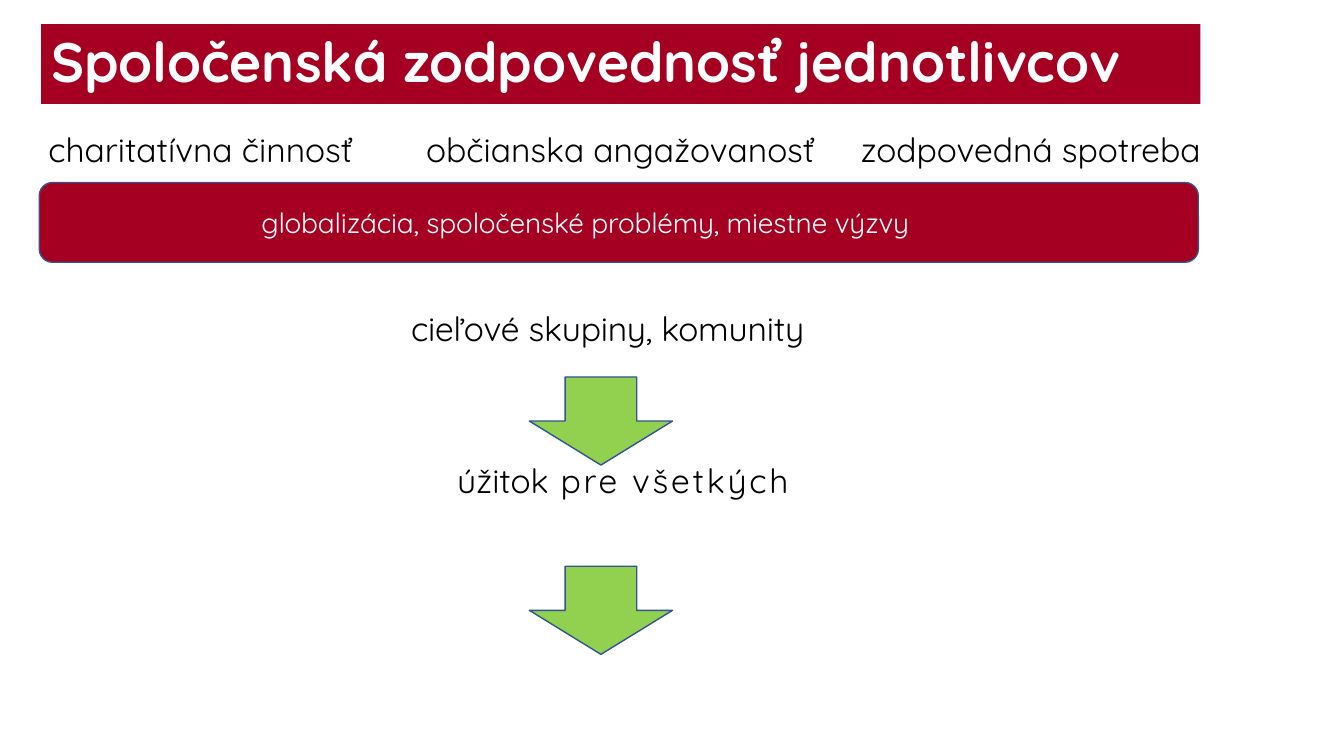
from pptx import Presentation
from pptx.dml.color import RGBColor
from pptx.enum.shapes import MSO_SHAPE
from pptx.enum.text import MSO_ANCHOR, PP_ALIGN
from pptx.util import Cm, Pt

RECTANGLE = MSO_SHAPE.RECTANGLE
ROUNDED = MSO_SHAPE.ROUNDED_RECTANGLE
DOWN_ARROW = MSO_SHAPE.DOWN_ARROW
MIDDLE = MSO_ANCHOR.MIDDLE
LEFT = PP_ALIGN.LEFT

CRIMSON = RGBColor(0xA5, 0x00, 0x21)
GREEN = RGBColor(0x92, 0xD0, 0x50)
BLUE = RGBColor(0x32, 0x54, 0x91)
WHITE = RGBColor(0xFF, 0xFF, 0xFF)
BLACK = RGBColor(0x00, 0x00, 0x00)
FONT = "Quicksand"

# Runs are (text, letter spacing in points); lengths are in centimetres.
TITLE = [("Spoločenská zodpovednosť jednotlivcov", 0)]
CHALLENGES = [("globalizácia, spoločenské problémy, miestne výzvy", -0.1)]
LABELS = [  # left, top, width, runs
    (1.22, 3.24, 8.5, [("charitatívna činnosť", 0)]),
    (10.74, 3.24, 10.5, [("občianska angažovanosť", 0)]),
    (21.69, 3.24, 9.5, [("zodpovedná spotreba", 0)]),
    (10.36, 7.77, 11, [("cieľové skupiny, komunity", -0.1)]),
    (11.52, 11.58, 10, [("úžitok", 0), (" pre všetkých", 2)]),
]
LABEL_HEIGHT = 1.06

BAND_WIDTH, BAND_HEIGHT = 29.21, 2.01
TITLE_LEFT, TITLE_TOP = 1.04, 0.61
CHALLENGES_LEFT, CHALLENGES_TOP = 0.99, 4.6
CHALLENGES_INDENT = 5.5
ARROW_WIDTH, ARROW_HEIGHT = 3.61, 2.22
ARROW_TOPS = [9.5, 14.27]
ARROW_LEFT = CHALLENGES_LEFT + (BAND_WIDTH - ARROW_WIDTH) / 2 - 0.45


def write(text_frame, runs, size, color, bold=False):
    paragraph = text_frame.paragraphs[0]
    paragraph.alignment = LEFT
    for text, spacing in runs:
        run = paragraph.add_run()
        run.text = text
        run.font.name = FONT
        run.font.size = Pt(size)
        run.font.bold = bold
        run.font.color.rgb = color
        if spacing:
            run._r.get_or_add_rPr().set("spc", str(round(spacing * 100)))
    return paragraph


def add_filled(slide, kind, left, top, width, height, fill, outlined=True):
    shape = slide.shapes.add_shape(kind, Cm(left), Cm(top), Cm(width), Cm(height))
    shape.shadow.inherit = False
    shape.fill.solid()
    shape.fill.fore_color.rgb = fill
    if outlined:
        shape.line.color.rgb = BLUE
        shape.line.width = Pt(1)
    else:
        shape.line.fill.background()
    shape.text_frame.vertical_anchor = MIDDLE
    return shape


def add_label(slide, left, top, width, runs):
    box = slide.shapes.add_textbox(Cm(left), Cm(top), Cm(width), Cm(LABEL_HEIGHT))
    frame = box.text_frame
    frame.word_wrap = True
    frame.margin_left = frame.margin_right = 0
    frame.margin_top = frame.margin_bottom = 0
    write(frame, runs, 24, BLACK)


def main():
    presentation = Presentation()
    presentation.slide_width, presentation.slide_height = Cm(33.87), Cm(19.05)
    slide = presentation.slides.add_slide(presentation.slide_layouts[6])

    title = add_filled(slide, RECTANGLE, TITLE_LEFT, TITLE_TOP,
                       BAND_WIDTH, BAND_HEIGHT, CRIMSON, outlined=False)
    write(title.text_frame, TITLE, 39.6, WHITE, bold=True).line_spacing = 0.9

    for label in LABELS:
        add_label(slide, *label)

    challenges = add_filled(slide, ROUNDED, CHALLENGES_LEFT, CHALLENGES_TOP,
                            BAND_WIDTH, BAND_HEIGHT, CRIMSON)
    challenges.text_frame.margin_left = Cm(CHALLENGES_INDENT)
    write(challenges.text_frame, CHALLENGES, 20, WHITE)

    for top in ARROW_TOPS:
        add_filled(slide, DOWN_ARROW, ARROW_LEFT, top,
                   ARROW_WIDTH, ARROW_HEIGHT, GREEN)

    presentation.save("out.pptx")


if __name__ == "__main__":
    main()
